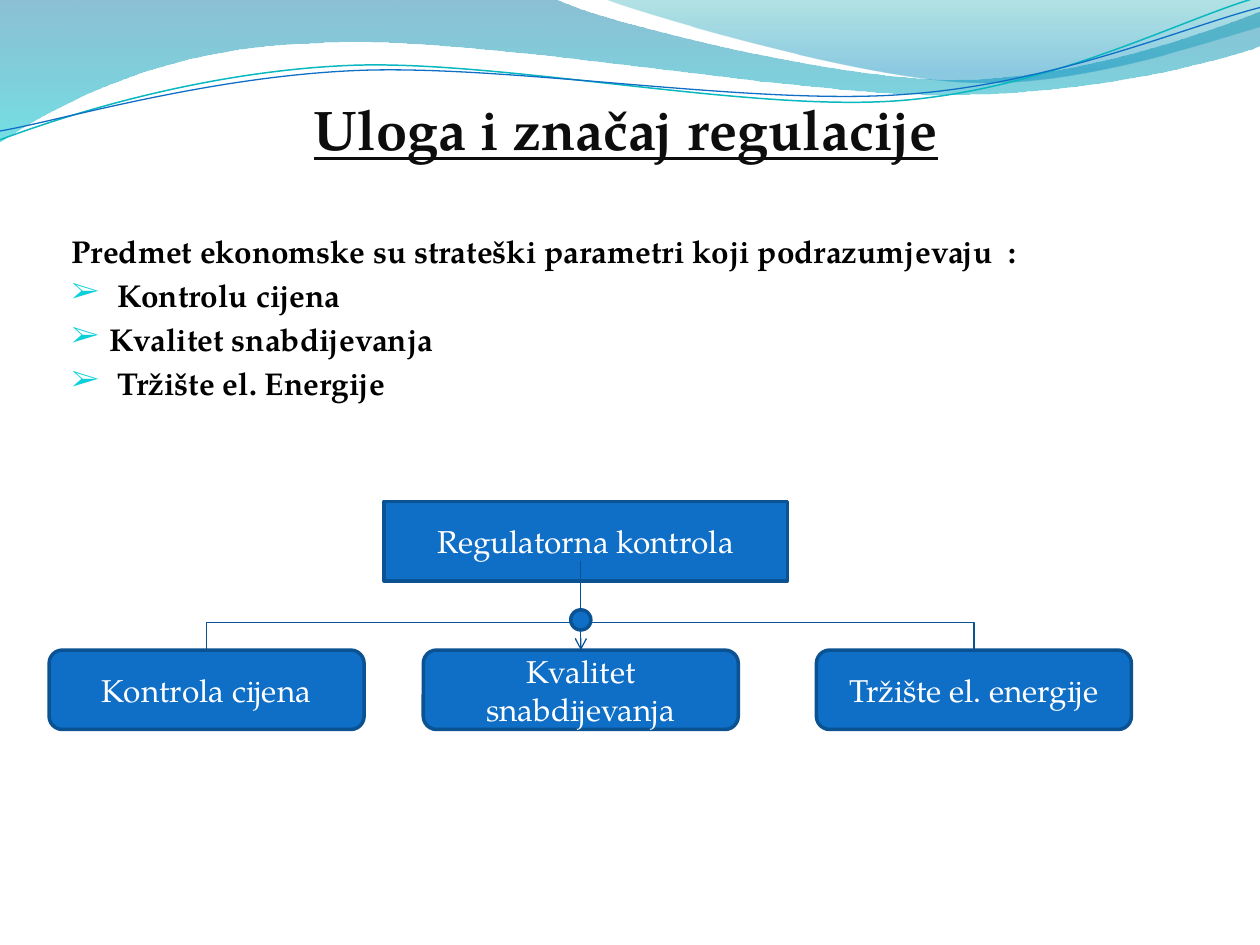
from lxml import etree
from pptx import Presentation
from pptx.dml.color import RGBColor
from pptx.enum import shapes, text
from pptx.oxml import ns
from pptx.util import Inches, Pt

FONT = "TeX Gyre Pagella"
BLUE = RGBColor(0x0F, 0x6F, 0xC6)
DARK_BLUE = RGBColor(0x0B, 0x52, 0x92)
LINK_BLUE = RGBColor(0x09, 0x52, 0x95)
TEAL = RGBColor(0x0A, 0xB8, 0xBF)
CYAN = RGBColor(0x0B, 0xD0, 0xD9)
WAVE_TOP = RGBColor(0x00, 0x74, 0xA1)
WAVE_BOTTOM = RGBColor(0x00, 0xC6, 0xCF)
CREST_TOP = RGBColor(0x00, 0xA1, 0xA9)
CREST_BOTTOM = RGBColor(0x00, 0x8B, 0xBF)
INK = RGBColor(0x0D, 0x0D, 0x0D)
BLACK = RGBColor(0, 0, 0)
WHITE = RGBColor(0xFF, 0xFF, 0xFF)

WAVE = [(0, 0), (4.4, -0.01), (4.76, 0.17, 6.64, 0.63, 7.58, 0.63),
        (8.53, 0.63, 9.58, 0.26, 10, 0.09), (10.01, 0.36),
        (9.83, 0.44, 8.7, 0.76, 7.46, 0.75), (6.22, 0.75, 3.82, 0.28, 2.57, 0.34),
        (1.29, 0.36, 0.46, 0.83, -0.01, 1.13)]
CREST = [(4.79, -0.01), (5.09, 0.11, 6.82, 0.62, 7.69, 0.65),
         (8.56, 0.69, 9.61, 0.32, 10, 0.21), (10, 0)]
TEAL_CURVE = [(0, 1.11), (0.48, 0.93, 1.58, 0.57, 2.77, 0.52),
              (3.95, 0.47, 5.93, 0.89, 7.13, 0.8), (8.33, 0.71, 9.38, 0.15, 9.98, -0.02)]
BLUE_CURVE = [(0, 1.04), (0.47, 0.96, 1.64, 0.61, 2.83, 0.56),
              (4.03, 0.51, 5.97, 0.84, 7.17, 0.75), (8.36, 0.67, 9.41, 0.21, 10, 0.06)]


def add_xml(parent, tag, **attrs):
    """Append a DrawingML child element and return it."""
    return etree.SubElement(parent, ns.qn(tag), {k: str(v) for k, v in attrs.items()})


def add_outline(s, path, left, top, close):
    """Draw a path whose six-number segments are cubic curves."""
    points = [(Inches(left + seg[i]), Inches(top + seg[i + 1]))
              for seg in path for i in range(0, len(seg), 2)]
    builder = s.shapes.build_freeform(*points[0])
    builder.add_line_segments(points[1:], close=close)
    sp = builder.convert_to_shape()
    sp.shadow.inherit = False
    lines = iter(sp._element.xpath(".//a:path/a:lnTo"))
    for seg in path[1:]:
        line = next(lines)
        if len(seg) == 6:
            line.tag = ns.qn("a:cubicBezTo")
            for _ in range(2):
                extra = next(lines)
                line.append(extra[0])
                extra.getparent().remove(extra)
    return sp


def add_waves(s, left, top):
    """Draw the translucent waves and thin curves along the top edge."""
    for path, stops in ((WAVE, ((0, WAVE_TOP, 45), (1, WAVE_BOTTOM, 55))),
                        (CREST, ((0, CREST_TOP, 30), (0.8, CREST_BOTTOM, 45)))):
        sp = add_outline(s, path, left, top, True)
        sp.line.fill.background()
        sp.fill.gradient()
        sp.fill.gradient_angle = 270
        for stop, (position, color, _) in zip(sp.fill.gradient_stops, stops):
            stop.position = position
            stop.color.rgb = color
        for clr, (_, _, opacity) in zip(sp._element.xpath(".//a:gs/a:srgbClr"), stops):
            add_xml(clr, "a:alpha", val=opacity * 1000)
    for path, color, width in ((TEAL_CURVE, TEAL, 0.85), (BLUE_CURVE, BLUE, 0.75)):
        sp = add_outline(s, path, left, top, False)
        sp.fill.background()
        sp.line.color.rgb = color
        sp.line.width = Pt(width)


def style_run(p, size, color, bold=False, underline=False):
    """Format the runs of a paragraph."""
    for r in p.runs:
        r.font.name = FONT
        r.font.size = Pt(size)
        r.font.color.rgb = color
        r.font.bold = bold
        r.font.underline = underline


def add_body(s, left, top, width, height):
    """Write the heading, the lead sentence and the arrow bullets."""
    tf = s.shapes.add_textbox(Inches(left), Inches(top), Inches(width), Inches(height)).text_frame
    tf.word_wrap = True
    rows = [("Uloga i značaj regulacije", 6.4, False),
            ("Predmet ekonomske su strateški parametri koji podrazumjevaju  :", 40, False),
            (" Kontrolu cijena", 3.6, True),
            ("Kvalitet snabdijevanja", 3.6, True),
            (" Tržište el. Energije", 3.6, True)]
    for i, (words, before, bullet) in enumerate(rows):
        p = tf.add_paragraph() if i else tf.paragraphs[0]
        p.text = words
        p.space_before = Pt(before)
        style_run(p, 18 if i else 32, BLACK if i else INK, True, i == 0)
        pPr = p._p.get_or_add_pPr()
        pPr.set("marL", str(Inches(0.3)))
        pPr.set("indent", str(Inches(-0.3)))
        if bullet:
            add_xml(add_xml(pPr, "a:buClr"), "a:srgbClr", val=CYAN)
            add_xml(pPr, "a:buSzPct", val=95000)
            add_xml(pPr, "a:buFont", typeface=FONT)
            add_xml(pPr, "a:buChar", char="➢")
    tf.paragraphs[0].alignment = text.PP_ALIGN.CENTER


def add_node(s, kind, left, top, width, height, words=""):
    """Draw a filled, outlined node with a centred label."""
    sp = s.shapes.add_shape(kind, Inches(left), Inches(top), Inches(width), Inches(height))
    sp.shadow.inherit = False
    sp.fill.solid()
    sp.fill.fore_color.rgb = BLUE
    sp.line.color.rgb = DARK_BLUE
    sp.line.width = Pt(2)
    if words:
        tf = sp.text_frame
        tf.word_wrap = True
        tf.vertical_anchor = text.MSO_ANCHOR.MIDDLE
        p = tf.paragraphs[0]
        p.text = words
        p.alignment = text.PP_ALIGN.CENTER
        style_run(p, 18, WHITE)


def add_link(s, kind, x1, y1, x2, y2):
    """Draw a thin connector without a shadow."""
    sp = s.shapes.add_connector(kind, x1, y1, x2, y2)
    sp.line.color.rgb = LINK_BLUE
    sp.line.width = Pt(0.75)
    add_xml(sp._element.spPr, "a:effectLst")
    return sp


def add_bracket(s, x1, x2, y, rise):
    """Join two points on one level with an elbow that rises above them."""
    mid, half, thin = Inches((x1 + x2) / 2), Inches((x2 - x1) / 2), Pt(0.12)
    level = Inches(y)
    sp = add_link(s, shapes.MSO_CONNECTOR.ELBOW, mid + thin, level + half, mid, level - half)
    sp._element.spPr.xfrm.set("rot", str(90 * 60000))
    av = sp._element.xpath(".//a:prstGeom/a:avLst")[0]
    add_xml(av, "a:gd", name="adj1", fmla=f"val {round(Inches(rise) / thin * 100000)}")


def add_control_tree(s, left, top, width, height):
    """Draw the control box, its three branches and the links between them."""
    node_w, node_h, dot = 2.5, 0.63, 0.16
    row = top + height - node_h
    lefts = [left, left + 2.97, left + width - node_w]
    centers = [x + node_w / 2 for x in lefts]
    add_node(s, shapes.MSO_SHAPE.RECTANGLE, left + 2.66, top, 3.2, node_h, "Regulatorna kontrola")
    labels = ["Kontrola cijena", "Kvalitet snabdijevanja", "Tržište el. energije"]
    for x, words in zip(lefts, labels):
        add_node(s, shapes.MSO_SHAPE.ROUNDED_RECTANGLE, x, row, node_w, node_h, words)
    add_bracket(s, centers[0], centers[2], row, 0.23)
    stem_x = Inches(centers[1])
    stem = add_link(s, shapes.MSO_CONNECTOR.STRAIGHT, stem_x, Inches(top + 0.47),
                    stem_x, Inches(row))
    add_xml(stem.line._get_or_add_ln(), "a:tailEnd", type="arrow")
    add_node(s, shapes.MSO_SHAPE.OVAL, centers[1] - dot / 2, row - 0.32, dot, dot)


def main():
    """Build the slide and save it."""
    prs = Presentation()
    prs.slide_width, prs.slide_height = Inches(10), Inches(7.5)
    s = prs.slides.add_slide(prs.slide_layouts[6])
    add_waves(s, 0, 0)
    add_body(s, 0.47, 0.7, 9, 6.8)
    add_control_tree(s, 0.39, 3.98, 8.59, 1.81)
    prs.save("out.pptx")


if __name__ == "__main__":
    main()
